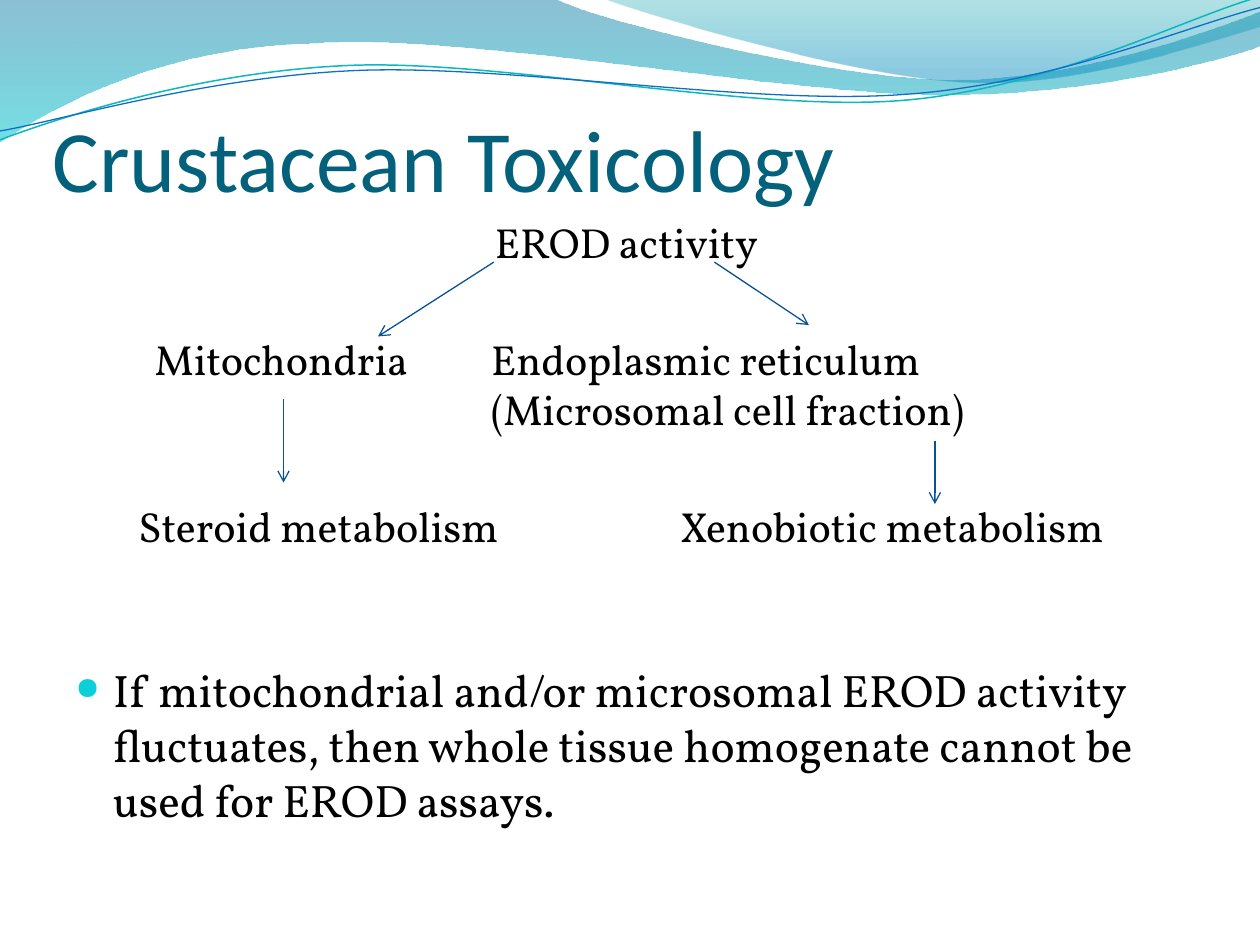
from lxml import etree
from pptx import Presentation
from pptx.dml.color import RGBColor
from pptx.enum.shapes import MSO_CONNECTOR
from pptx.enum.text import MSO_ANCHOR, PP_ALIGN
from pptx.oxml import parse_xml
from pptx.oxml.ns import nsdecls, qn
from pptx.util import Inches, Pt

BACK_WAVE = [
    (0, 0), (4.4, -0.01),
    (4.76, 0.17, 6.64, 0.63, 7.58, 0.63), (8.53, 0.63, 9.58, 0.26, 10, 0.09),
    (10.01, 0.36),
    (9.83, 0.44, 8.7, 0.76, 7.46, 0.75), (6.22, 0.75, 3.82, 0.28, 2.57, 0.34),
    (1.29, 0.36, 0.46, 0.83, -0.01, 1.13),
]
FRONT_WAVE = [
    (4.79, -0.01),
    (5.09, 0.11, 6.82, 0.62, 7.69, 0.65), (8.56, 0.69, 9.61, 0.32, 10, 0.21),
    (10, 0),
]
TEAL_STRAND = [
    (0, 1.11),
    (0.48, 0.93, 1.58, 0.57, 2.77, 0.52), (3.95, 0.47, 5.93, 0.89, 7.13, 0.8),
    (8.33, 0.71, 9.38, 0.15, 9.98, -0.02),
]
BLUE_STRAND = [
    (0, 1.04),
    (0.47, 0.96, 1.64, 0.61, 2.83, 0.56), (4.03, 0.51, 5.97, 0.84, 7.17, 0.75),
    (8.36, 0.67, 9.41, 0.21, 10, 0.06),
]
ARROWS = [
    (3.92, 2.08, 3, 2.67),
    (5.67, 2.08, 6.42, 2.58),
    (2.25, 3.17, 2.25, 3.83),
    (7.42, 3.5, 7.42, 4),
]
CONCLUSION = (
    "If mitochondrial and/or microsomal EROD activity fluctuates, "
    "then whole tissue homogenate cannot be used for EROD assays."
)


def color(hex_code):
    return RGBColor.from_string(hex_code)


def add_outline(page, segments, close):
    points = [
        (Inches(segment[i]), Inches(segment[i + 1]))
        for segment in segments for i in range(0, len(segment), 2)
    ]
    builder = page.shapes.build_freeform(*points[0])
    builder.add_line_segments(points[1:], close=close)
    shape = builder.convert_to_shape()
    shape.shadow.inherit = False
    lines = iter(list(shape._element.iter(qn("a:lnTo"))))
    for segment in segments[1:]:
        line = next(lines)
        if len(segment) == 6:
            curve = etree.Element(qn("a:cubicBezTo"))
            line.addprevious(curve)
            for node in (line, next(lines), next(lines)):
                curve.append(node[0])
                node.getparent().remove(node)
    return shape


def add_wave(page, segments, stops):
    shape = add_outline(page, segments, True)
    shape.line.fill.background()
    stop_xml = "".join(
        f'<a:gs pos="{position * 1000}"><a:srgbClr val="{hex_code}">'
        f'<a:alpha val="{alpha * 1000}"/></a:srgbClr></a:gs>'
        for position, hex_code, alpha in stops
    )
    gradient = parse_xml(
        f'<a:gradFill {nsdecls("a")}><a:gsLst>{stop_xml}</a:gsLst>'
        '<a:lin ang="5400000" scaled="0"/></a:gradFill>'
    )
    shape._element.spPr.find(qn("a:custGeom")).addnext(gradient)


def add_strand(page, segments, hex_code, width):
    shape = add_outline(page, segments, False)
    shape.fill.background()
    shape.line.color.rgb = color(hex_code)
    shape.line.width = Pt(width)


def add_frame(page, bounds, margins, anchor):
    box = page.shapes.add_textbox(*(Inches(length) for length in bounds))
    frame = box.text_frame
    frame.margin_left = frame.margin_right = Inches(margins[0])
    frame.margin_top, frame.margin_bottom = Inches(margins[1]), Inches(margins[2])
    frame.word_wrap = True
    frame.vertical_anchor = anchor
    return frame


def add_span(para, text, size, font="Vollkorn", hex_code="000000"):
    span = para.add_run()
    span.text = text
    span.font.size = Pt(size)
    span.font.name = font
    span.font.color.rgb = color(hex_code)


def add_para(frame, space_before):
    para = frame.add_paragraph()
    para.space_before = Pt(space_before)
    return para


def add_row(frame, space_before, lines, stops):
    para = add_para(frame, space_before)
    tab_list = etree.SubElement(para._p.get_or_add_pPr(), qn("a:tabLst"))
    for stop in stops:
        etree.SubElement(tab_list, qn("a:tab"), pos=str(Inches(stop)), algn="l")
    for index, text in enumerate(lines):
        if index:
            para.add_line_break()
        add_span(para, text, 24)


def add_bullet(para, hex_code, percent, indent):
    properties = para._p.get_or_add_pPr()
    properties.set("marL", str(Inches(indent)))
    properties.set("indent", str(-Inches(indent)))
    bullet_color = etree.SubElement(properties, qn("a:buClr"))
    etree.SubElement(bullet_color, qn("a:srgbClr"), val=hex_code)
    etree.SubElement(properties, qn("a:buSzPct"), val=str(percent * 1000))
    etree.SubElement(properties, qn("a:buChar"), char="●")


def add_arrow(page, ends):
    arrow = page.shapes.add_connector(
        MSO_CONNECTOR.STRAIGHT, *(Inches(length) for length in ends)
    )
    arrow.line.color.rgb = color("095295")
    arrow.line.width = Pt(0.75)
    etree.SubElement(arrow.line._get_or_add_ln(), qn("a:tailEnd"), type="arrow")
    etree.SubElement(arrow._element.spPr, qn("a:effectLst"))


def add_body(page):
    frame = add_frame(page, (0.5, 1.67, 9, 5.25), (0.1, 0.05, 0.05), MSO_ANCHOR.TOP)
    heading = frame.paragraphs[0]
    heading.alignment = PP_ALIGN.CENTER
    add_span(heading, "EROD activity ", 24)
    add_row(frame, 38, ["\tMitochondria\tEndoplasmic reticulum",
                        "\t\t(Microsomal cell fraction)"], [0.63, 3.3, 5.3])
    add_row(frame, 38, ["\tSteroid metabolism\tXenobiotic metabolism"], [0.5, 4.8])
    conclusion = add_para(frame, 63.5)
    add_bullet(conclusion, "0BD0D9", 68, 0.3)
    add_span(conclusion, CONCLUSION, 26)


def main():
    deck = Presentation()
    deck.slide_width, deck.slide_height = Inches(10), Inches(7.5)
    page = deck.slides.add_slide(deck.slide_layouts[6])

    add_wave(page, BACK_WAVE, [(0, "0074A1", 45), (100, "00C6CF", 55)])
    add_wave(page, FRONT_WAVE, [(0, "00A1A9", 30), (80, "008BBF", 45)])
    add_strand(page, TEAL_STRAND, "0AB8BF", 0.85)
    add_strand(page, BLUE_STRAND, "0F6FC6", 0.75)

    title = add_frame(page, (0.42, 0.42, 9, 1.25), (0, 0.05, 0), MSO_ANCHOR.BOTTOM)
    add_span(title.paragraphs[0], "Crustacean Toxicology", 50, "Calibri", "04617B")
    add_body(page)

    for ends in ARROWS:
        add_arrow(page, ends)

    deck.save("out.pptx")


if __name__ == "__main__":
    main()
